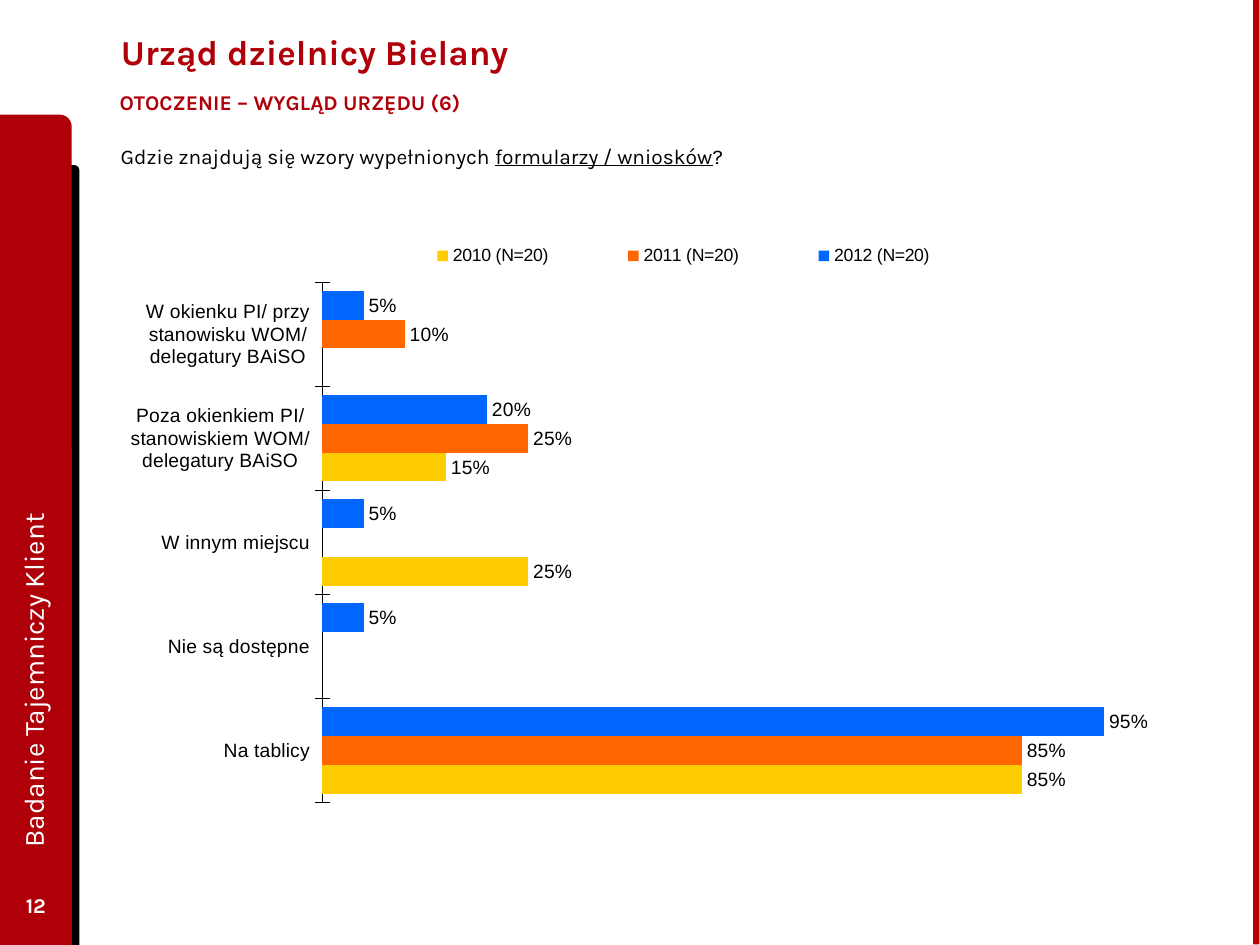
from pptx import Presentation
from pptx import util as u
from pptx.chart.data import CategoryChartData
from pptx.dml.color import RGBColor
from pptx.enum import chart as charts, shapes, text
from pptx.oxml import parse_xml
from pptx.oxml.ns import nsdecls, qn

COLORS = {"red": "AF000A", "edge": "BD0000", "black": "000000", "white": "FFFFFF",
          "blue": "0066FF", "orange": "FF6600", "yellow": "FFCC00"}
TITLE = "Urząd dzielnicy Bielany"
SUBTITLE = "OTOCZENIE – WYGLĄD URZĘDU (6)"
QUESTION = [("Gdzie znajdują się wzory wypełnionych ", False),
            ("formularzy / wniosków", True), ("?", False)]
STUDY = "Badanie Tajemniczy Klient"
PAGE_NUMBER = "12"
PLACES = ["W okienku PI/ przy stanowisku WOM/ delegatury BAiSO",
          "Poza okienkiem PI/ stanowiskiem WOM/ delegatury BAiSO",
          "W innym miejscu", "Nie są dostępne", "Na tablicy"]
SERIES = [("2012 (N=20)", "blue", (0.05, 0.2, 0.05, 0.05, 0.95)),
          ("2011 (N=20)", "orange", (0.1, 0.25, None, None, 0.85)),
          ("2010 (N=20)", "yellow", (None, 0.15, 0.25, None, 0.85))]
SHAPE = shapes.MSO_SHAPE
# kind, colour, place, rotation
BANDS = [(SHAPE.ROUND_1_RECTANGLE, "black", (0.39, 1.31, 0.24, 6.19), 0),
         (SHAPE.ROUND_1_RECTANGLE, "red", (0, 0.91, 0.57, 6.59), 0),
         (SHAPE.RECTANGLE, "edge", (6.22, 3.72, 7.5, 0.05), 90)]


def rgb(name):
    return RGBColor.from_string(COLORS[name])


def inches(place):
    return [u.Inches(value) for value in place]


def style(font, size, color="black", name="Karla", bold=False):
    font.size, font.name, font.bold = u.Pt(size), name, bold
    font.color.rgb = rgb(color)


def fill_text(box, runs, size, color, bold=False, align=text.PP_ALIGN.LEFT,
              anchor=text.MSO_ANCHOR.MIDDLE):
    """Write (words, underlined) runs into the first paragraph of a box."""
    frame = box.text_frame
    frame.word_wrap = True
    frame.vertical_anchor = anchor
    para = frame.paragraphs[0]
    para.alignment = align
    for words, underlined in runs:
        span = para.add_run()
        span.text = words
        style(span.font, size, color, bold=bold)
        if underlined:
            span.font.underline = True
    return frame


def set_layout(parent, index, place, inner=False):
    """Fix a chart part at fractions (x, y, w, h) of the chart area."""
    old = parent.find(qn("c:layout"))
    if old is not None:
        parent.remove(old)
    target = '<c:layoutTarget val="inner"/>' if inner else ""
    modes = '<c:xMode val="edge"/><c:yMode val="edge"/>'
    sizes = "".join(f'<c:{key} val="{value}"/>' for key, value in zip("xywh", place))
    parent.insert(index, parse_xml(
        f'<c:layout {nsdecls("c")}><c:manualLayout>{target}{modes}{sizes}'
        "</c:manualLayout></c:layout>"))


def add_bands(page):
    for kind, color, place, rotation in BANDS:
        band = page.shapes.add_shape(kind, *inches(place))
        band.rotation = rotation
        band.shadow.inherit = False
        band.fill.solid()
        band.fill.fore_color.rgb = rgb(color)
        band.line.fill.background()


def add_texts(page):
    title = page.shapes.title
    title.left, title.top, title.width, title.height = inches((0.86, 0.05, 7.77, 0.72))
    fill_text(title, [(TITLE, False)], 20, "red", bold=True)

    def add_box(place, *args, **options):
        box = page.shapes.add_textbox(*inches(place))
        return box, fill_text(box, *args, **options)

    top = text.MSO_ANCHOR.TOP
    _, frame = add_box((0.75, 0.66, 3.85, 0.33), [(SUBTITLE, False)], 12, "red",
                       bold=True, anchor=top)
    frame.margin_left = frame.margin_right = u.Inches(0.2)
    frame.word_wrap = False
    add_box((0.86, 1.09, 6.47, 0.3), QUESTION, 12, "black", anchor=top)
    add_box((0, 6.98, 0.57, 0.4), [(PAGE_NUMBER, False)], 12, "white", bold=True,
            align=text.PP_ALIGN.CENTER)
    box, _ = add_box((-2.62, 3.69, 5.76, 0.51), [(STUDY, False)], 16, "white")
    box.rotation = 270


def add_bars(page):
    data = CategoryChartData(number_format="0%")
    data.categories = PLACES
    for name, _, values in SERIES:
        data.add_series(name, values)
    chart = page.shapes.add_chart(charts.XL_CHART_TYPE.BAR_CLUSTERED,
                                  *inches((0.8, 1.85, 9.07, 4.52)), data).chart
    style(chart.font, 11, name="Arial")
    chart.has_title = False

    chart.has_legend = True
    legend = chart.legend
    legend.position = charts.XL_LEGEND_POSITION.TOP
    legend.include_in_layout = False
    style(legend.font, 10.1, name="Arial")
    set_layout(legend._element, 1, (0.23, 0.01, 0.56, 0.06))

    places = chart.category_axis
    places.reverse_order = True
    places.major_tick_mark = charts.XL_TICK_MARK.CROSS
    places.has_major_gridlines = False
    places.format.line.color.rgb = rgb("black")
    places.format.line.width = u.Pt(0.23)
    style(places.tick_labels.font, 11, name="Arial")

    shares = chart.value_axis
    shares.minimum_scale, shares.maximum_scale = 0, 1
    shares.has_major_gridlines = False
    shares.visible = False

    plot = chart.plots[0]
    plot.gap_width, plot.overlap = 60, 0
    plot.vary_by_categories = False
    for series, (_, color, _) in zip(plot.series, SERIES):
        series.format.fill.solid()
        series.format.fill.fore_color.rgb = rgb(color)
        series.invert_if_negative = False
        labels = series.data_labels
        labels.show_value = True
        labels.number_format, labels.number_format_is_linked = "0%", False
        labels.position = charts.XL_LABEL_POSITION.OUTSIDE_END
        style(labels.font, 11, name="Arial")
    area = chart._chartSpace.find(".//" + qn("c:plotArea"))
    set_layout(area, 0, (0.194, 0.089, 0.72, 0.914), inner=True)


def main():
    deck = Presentation()
    deck.slide_width, deck.slide_height = u.Inches(10), u.Inches(7.5)
    page = deck.slides.add_slide(deck.slide_layouts[5])
    add_bands(page)
    add_texts(page)
    add_bars(page)
    deck.save("out.pptx")


if __name__ == "__main__":
    main()
